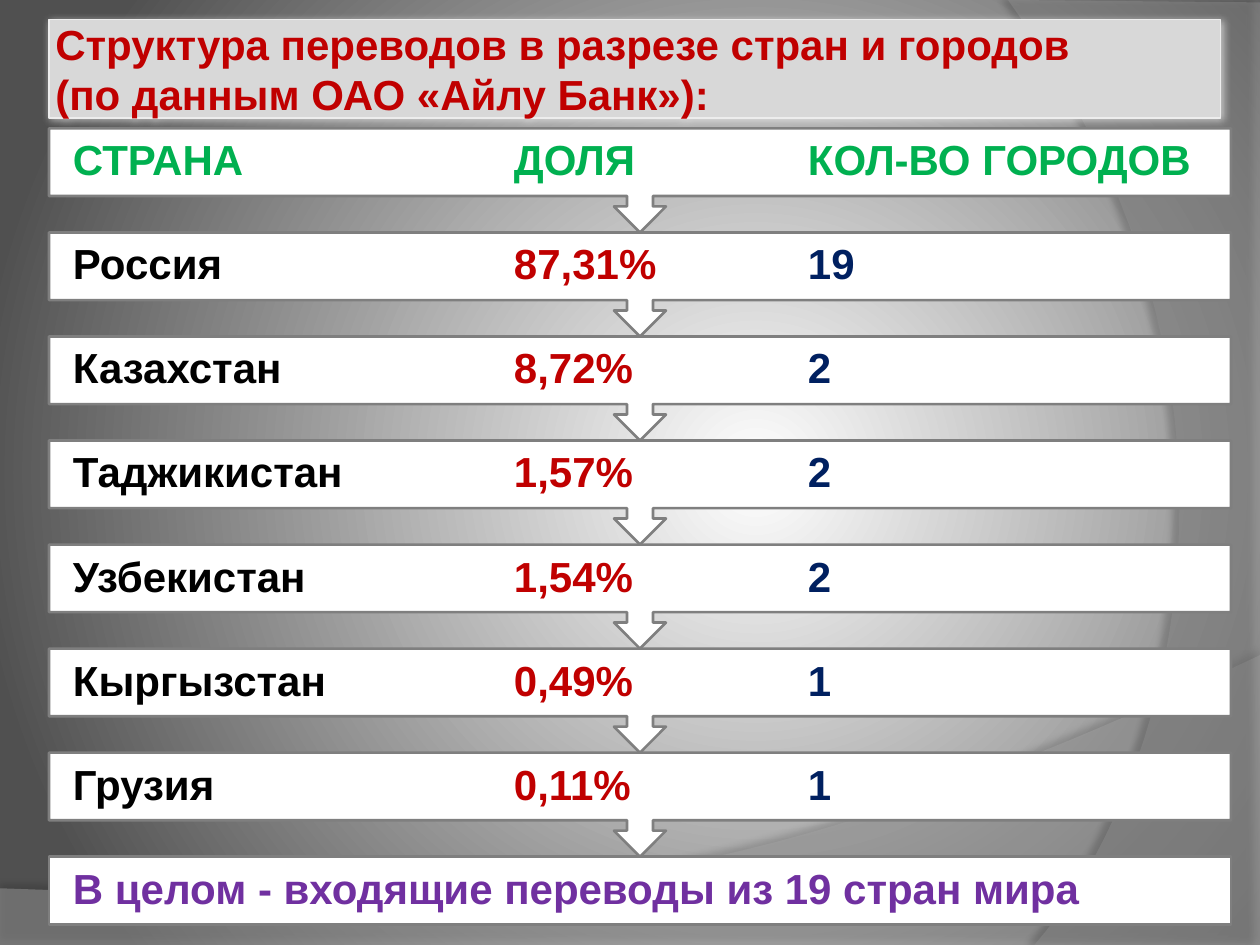
from dataclasses import dataclass
from lxml.etree import SubElement
from pptx import Presentation
from pptx.dml.color import RGBColor
from pptx.enum.shapes import MSO_SHAPE
from pptx.enum.text import MSO_ANCHOR, MSO_AUTO_SIZE, PP_ALIGN
from pptx.oxml.ns import qn
from pptx.util import Pt


@dataclass(frozen=True)
class Theme:
    font: str = "Arial"
    size: int = 24
    white: str = "FFFFFF"
    dark: str = "505050"
    floor: str = "A4A4A4"
    side: str = "939393"
    panel: str = "D8D8D8"
    edge: str = "EDEDED"
    line: str = "7F7F7F"
    black: str = "000000"
    red: str = "C00000"
    navy: str = "002060"
    green: str = "00B050"
    violet: str = "7030A0"


theme = Theme()
rgb = RGBColor.from_string


def shade(shape, color, alpha, blur, dist, angle):
    """Give the shape an outer shadow; alpha in percent, angle in degrees."""
    effects = SubElement(shape._element.spPr, qn("a:effectLst"))
    shadow = SubElement(effects, qn("a:outerShdw"), blurRad=str(Pt(blur)),
                        dist=str(Pt(dist)), dir=str(angle * 60000),
                        algn="ctr", rotWithShape="0")
    tint = SubElement(shadow, qn("a:srgbClr"), val=color)
    SubElement(tint, qn("a:alpha"), val=str(alpha * 1000))


def curve(a, b, c, d, count=40):
    """Points along a cubic Bezier curve, without its start."""
    steps = [i / count for i in range(1, count + 1)]
    return [tuple((1 - t) ** 3 * p + 3 * t * (1 - t) ** 2 * q
                  + 3 * t * t * (1 - t) * r + t ** 3 * s
                  for p, q, r, s in zip(a, b, c, d)) for t in steps]


deck = Presentation()
deck.slide_width, deck.slide_height = Pt(720), Pt(540)
slide = deck.slides.add_slide(deck.slide_layouts[5])
shapes = slide.shapes

# Background: radial gradient
back = slide.background.fill
back.gradient()
for stop, color, place in zip(back.gradient_stops,
                              (theme.white, theme.dark), (0, 1)):
    stop.color.rgb = rgb(color)
    stop.position = place
grad = slide.background._cSld.find(".//" + qn("a:gradFill"))
grad.remove(grad.find(qn("a:lin")))
radial = SubElement(grad, qn("a:path"), path="circle")
SubElement(radial, qn("a:fillToRect"), l="60000", t="50000", r="40000", b="50000")

# Background: two translucent waves
waves = [
    ([(0, 507.6), (0, 540), (720, 540), (720, 374.4)]
     + curve((720, 374.4), (402.5, 524.9), (281.5, 517.7), (0, 507.6)),
     theme.floor, 45, (35, 4, 3.5, 270)),
    ([(720, 1.4), (720, 540), (591.1, 540)]
     + curve((591.1, 540), (673.2, 445.7), (733, 216), (576, 0)),
     theme.side, 40, (45, 4, 4, 180)),
]
for points, color, alpha, shadow in waves:
    points = [(Pt(x), Pt(y)) for x, y in points]
    pen = shapes.build_freeform(*points[0])
    pen.add_line_segments(points[1:], close=True)
    wave = pen.convert_to_shape()
    wave.fill.solid()
    wave.fill.fore_color.rgb = rgb(color)
    tint = wave._element.spPr.find(qn("a:solidFill"))[0]
    SubElement(tint, qn("a:alpha"), val=str(alpha * 1000))
    wave.line.fill.background()
    shade(wave, theme.black, *shadow)

# Title, brought in front of the waves
title = shapes.title
shapes._spTree.append(title._element)
title.left, title.top, title.width, title.height = Pt(28), Pt(11.3), Pt(669.6), Pt(56.2)
title.fill.solid()
title.fill.fore_color.rgb = rgb(theme.panel)
title.line.color.rgb = rgb(theme.edge)
title.line.width = Pt(0.75)
shade(title, theme.white, 60, 5, 0, 0)
frame = title.text_frame
frame.text = "Структура переводов в разрезе стран и городов\v(по данным ОАО «Айлу Банк»):"
frame.auto_size = MSO_AUTO_SIZE.NONE
frame.word_wrap = True
frame.vertical_anchor = MSO_ANCHOR.MIDDLE
frame.margin_left = frame.margin_right = Pt(3.6)
frame.margin_top = frame.margin_bottom = Pt(3.6)
head = frame.paragraphs[0]
head.alignment = PP_ALIGN.LEFT
head.font.name, head.font.size, head.font.bold = theme.font, Pt(theme.size), True
head.font.color.rgb = rgb(theme.red)

# Chain of bars, each pointing to the next
cells = (theme.black, theme.red, theme.navy)
rows = [
    (("СТРАНА", "ДОЛЯ", "КОЛ-ВО ГОРОДОВ"), (theme.green,) * 3),
    (("Россия", "87,31%", "19"), cells),
    (("Казахстан", "8,72%", "2"), cells),
    (("Таджикистан", "1,57%", "2"), cells),
    (("Узбекистан", "1,54%", "2"), cells),
    (("Кыргызстан", "0,49%", "1"), cells),
    (("Грузия", "0,11%", "1"), cells),
    (("В целом - входящие переводы из 19 стран мира",), (theme.violet,)),
]
top, pitch, wide, bar = 73.4, 59.45, 675.4, 38.8
tabs = (252, 420)
last = len(rows) - 1
# Lowest first, so that each arrow tip lies over the bar below
for i, (words, colors) in reversed(list(enumerate(rows))):
    kind, high = ((MSO_SHAPE.RECTANGLE, bar) if i == last
                  else (MSO_SHAPE.DOWN_ARROW_CALLOUT, pitch))
    box = shapes.add_shape(kind, Pt(28), Pt(top + i * pitch), Pt(wide), Pt(high))
    box.shadow.inherit = False
    box.fill.solid()
    box.fill.fore_color.rgb = rgb(theme.white)
    box.line.color.rgb = rgb(theme.line)
    box.line.width = Pt(1.5)
    frame = box.text_frame
    frame.word_wrap = True
    frame.vertical_anchor = MSO_ANCHOR.MIDDLE
    frame.margin_left = frame.margin_right = Pt(13.7)
    frame.margin_top = frame.margin_bottom = 0
    para = frame.paragraphs[0]
    para.alignment = PP_ALIGN.LEFT
    para.line_spacing = 0.9
    para.font.name, para.font.size, para.font.bold = theme.font, Pt(theme.size), True
    stops = para._p.get_or_add_pPr().find(qn("a:defRPr"))
    tablist = SubElement(para._p.pPr, qn("a:tabLst"))
    stops.addprevious(tablist)
    for tab in tabs:
        SubElement(tablist, qn("a:tab"), pos=str(Pt(tab)), algn="l")
    for j, (word, color) in enumerate(zip(words, colors)):
        run = para.add_run()
        run.text = "\t" + word if j else word
        run.font.color.rgb = rgb(color)

deck.save("out.pptx")
